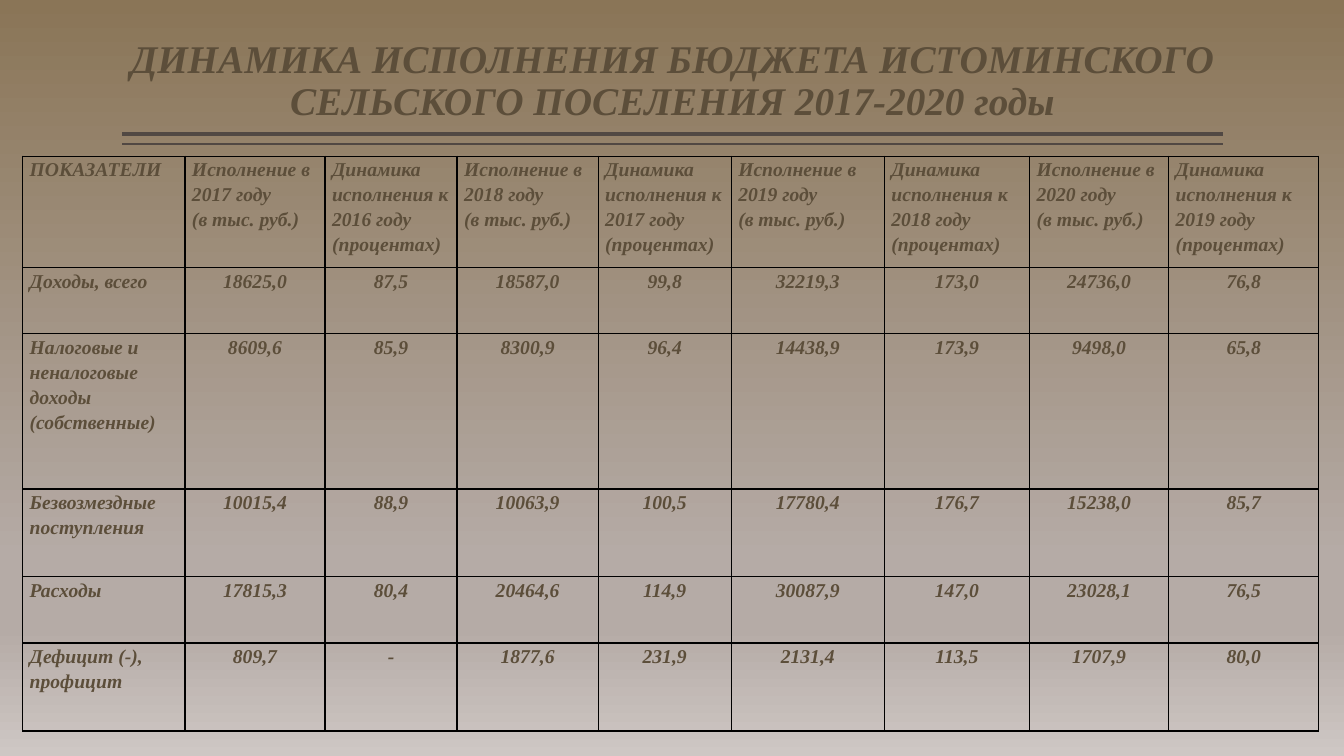
"""Build the slide on budget trends for 2017-2020."""
from copy import deepcopy
from dataclasses import dataclass

from lxml import etree
from pptx import Presentation
from pptx import util as u
from pptx.dml.color import RGBColor
from pptx.enum import shapes, text
from pptx.oxml import ns

BROWN = RGBColor(0x5C, 0x4E, 0x3A)
SLATE = RGBColor(0x51, 0x48, 0x43)
BLACK = RGBColor(0, 0, 0)
FONT = "Times New Roman"
TITLE = "ДИНАМИКА ИСПОЛНЕНИЯ БЮДЖЕТА ИСТОМИНСКОГО СЕЛЬСКОГО ПОСЕЛЕНИЯ 2017-2020 годы"
YEARS = range(2017, 2021)
LEFT, WIDTH = 87.12, 786.24
COLS = (115.92, 100.08, 94.32, 100.8, 95.04, 109.44, 103.68, 99.36, 107.28)


@dataclass(frozen=True)
class Stop:
    place: float
    color: RGBColor


@dataclass(frozen=True)
class Rule:
    top: float
    weight: float


@dataclass(frozen=True)
class Row:
    height: float
    label: str
    values: tuple[str, ...]


STOPS = (
    Stop(0, RGBColor(0x8A, 0x75, 0x57)),
    Stop(0.74, RGBColor(0xB5, 0xAB, 0xA6)),
    Stop(0.83, RGBColor(0xB5, 0xAB, 0xA6)),
    Stop(1, RGBColor(0xCE, 0xC7, 0xC4)),
)
RULES = (Rule(95.76, 3), Rule(102.96, 1))
HEADS = tuple(
    head
    for year in YEARS
    for head in (
        f"Исполнение в {year} году\n(в тыс. руб.)",
        f"Динамика исполнения к {year - 1} году (процентах)",
    )
)
ROWS = (
    Row(79.5, "ПОКАЗАТЕЛИ", HEADS),
    Row(47.3, "Доходы, всего",
        ("18625,0", "87,5", "18587,0", "99,8", "32219,3", "173,0", "24736,0", "76,8")),
    Row(110.9, "Налоговые и неналоговые доходы\n(собственные)",
        ("8609,6", "85,9", "8300,9", "96,4", "14438,9", "173,9", "9498,0", "65,8")),
    Row(62.8, "Безвозмездные поступления",
        ("10015,4", "88,9", "10063,9", "100,5", "17780,4", "176,7", "15238,0", "85,7")),
    Row(47.3, "Расходы",
        ("17815,3", "80,4", "20464,6", "114,9", "30087,9", "147,0", "23028,1", "76,5")),
    Row(62.8, "Дефицит (-),\nпрофицит",
        ("809,7", "-", "1877,6", "231,9", "2131,4", "113,5", "1707,9", "80,0")),
)


def paint_back(slide) -> None:
    fill = slide.background.fill
    fill.gradient()
    fill.gradient_angle = 270
    stops = slide.element.find(".//" + ns.qn("a:gsLst"))
    while len(stops) < len(STOPS):
        stops.append(deepcopy(stops[0]))
    for mark, stop in zip(fill.gradient_stops, STOPS):
        mark.position = stop.place
        mark.color.rgb = stop.color


def style_text(frame, size: float, gap: float, align: text.PP_ALIGN) -> None:
    for para in frame.paragraphs:
        para.alignment = align
        para.line_spacing = gap
        font = para.font
        font.name, font.size = FONT, u.Pt(size)
        font.bold = font.italic = True
        font.color.rgb = BROWN


def add_title(slide) -> None:
    title = slide.shapes.title
    title.left, title.top = u.Pt(LEFT), u.Pt(5.76)
    title.width, title.height = u.Pt(WIDTH), u.Pt(86.4)
    frame = title.text_frame
    frame.text = TITLE
    frame.word_wrap = True
    frame.auto_size = text.MSO_AUTO_SIZE.NONE
    frame.vertical_anchor = text.MSO_ANCHOR.BOTTOM
    frame.margin_left = frame.margin_right = 0
    frame.margin_top = frame.margin_bottom = u.Pt(3.6)
    style_text(frame, 28, 0.9, text.PP_ALIGN.CENTER)


def add_rule(slide, rule: Rule) -> None:
    line = slide.shapes.add_connector(
        shapes.MSO_CONNECTOR.STRAIGHT,
        u.Pt(LEFT + WIDTH), u.Pt(rule.top), u.Pt(LEFT), u.Pt(rule.top))
    line.line.color.rgb = SLATE
    line.line.width = u.Pt(rule.weight)
    etree.SubElement(line.element.spPr, ns.qn("a:effectLst"))


def frame_cell(cell) -> None:
    props = cell._tc.get_or_add_tcPr()
    for side in "LRTB":
        edge = etree.SubElement(props, ns.qn(f"a:ln{side}"), w=str(u.Pt(1)))
        fill = etree.SubElement(edge, ns.qn("a:solidFill"))
        etree.SubElement(fill, ns.qn("a:srgbClr"), val=str(BLACK))


def fill_cell(cell, words: str, align: text.PP_ALIGN) -> None:
    cell.text = words
    cell.margin_left = cell.margin_right = u.Pt(5.04)
    cell.margin_top = cell.margin_bottom = 0
    style_text(cell.text_frame, 14, 1.15, align)
    frame_cell(cell)
    cell.fill.background()


def add_grid(slide) -> None:
    grid = slide.shapes.add_table(
        len(ROWS), len(COLS), u.Pt(16.2), u.Pt(111.6),
        u.Pt(sum(COLS)), u.Pt(sum(row.height for row in ROWS))).table
    grid.first_row = grid.horz_banding = False
    for col, width in zip(grid.columns, COLS):
        col.width = u.Pt(width)
    for r, row in enumerate(ROWS):
        grid.rows[r].height = u.Pt(row.height)
        for c, words in enumerate((row.label, *row.values)):
            align = text.PP_ALIGN.CENTER if r and c else text.PP_ALIGN.LEFT
            fill_cell(grid.cell(r, c), words, align)


def main() -> None:
    deck = Presentation()
    deck.slide_width, deck.slide_height = u.Pt(960), u.Pt(540)
    slide = deck.slides.add_slide(deck.slide_layouts.get_by_name("Title Only"))
    paint_back(slide)
    for rule in RULES:
        add_rule(slide, rule)
    add_title(slide)
    add_grid(slide)
    deck.save("out.pptx")


if __name__ == "__main__":
    main()
